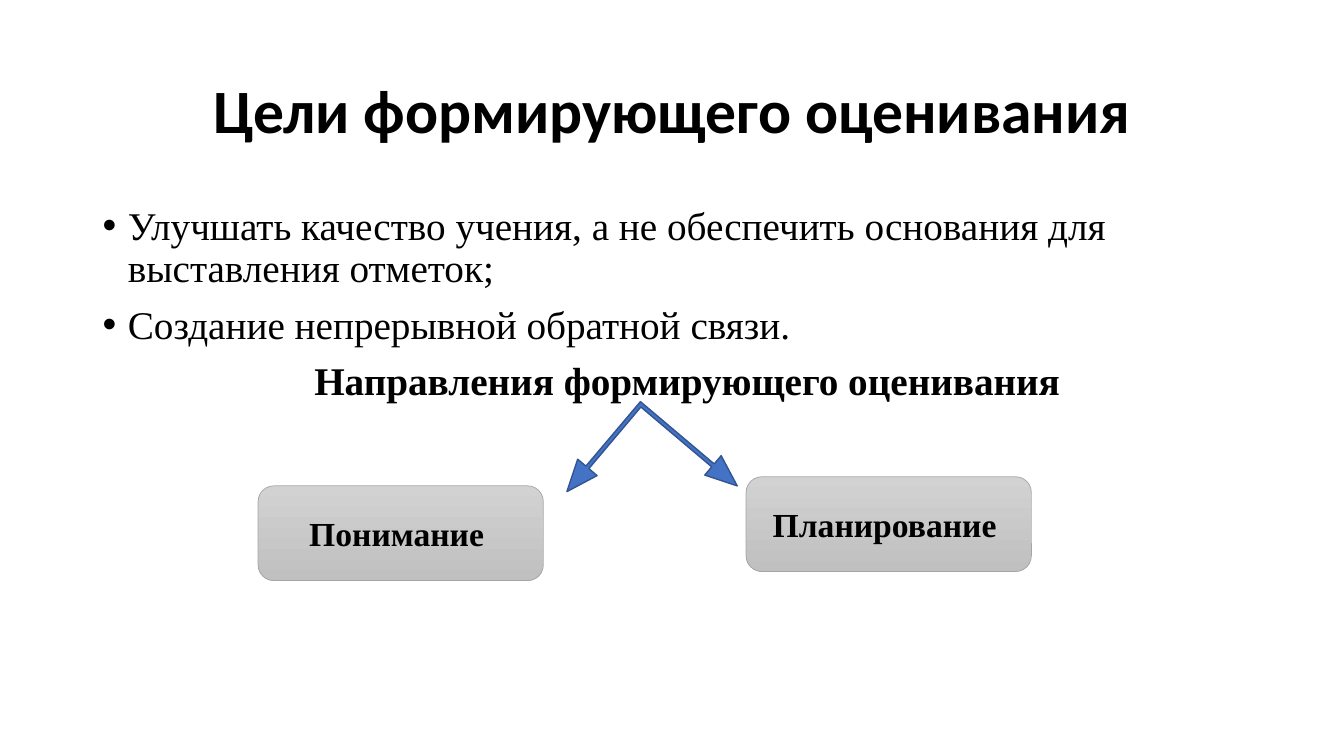
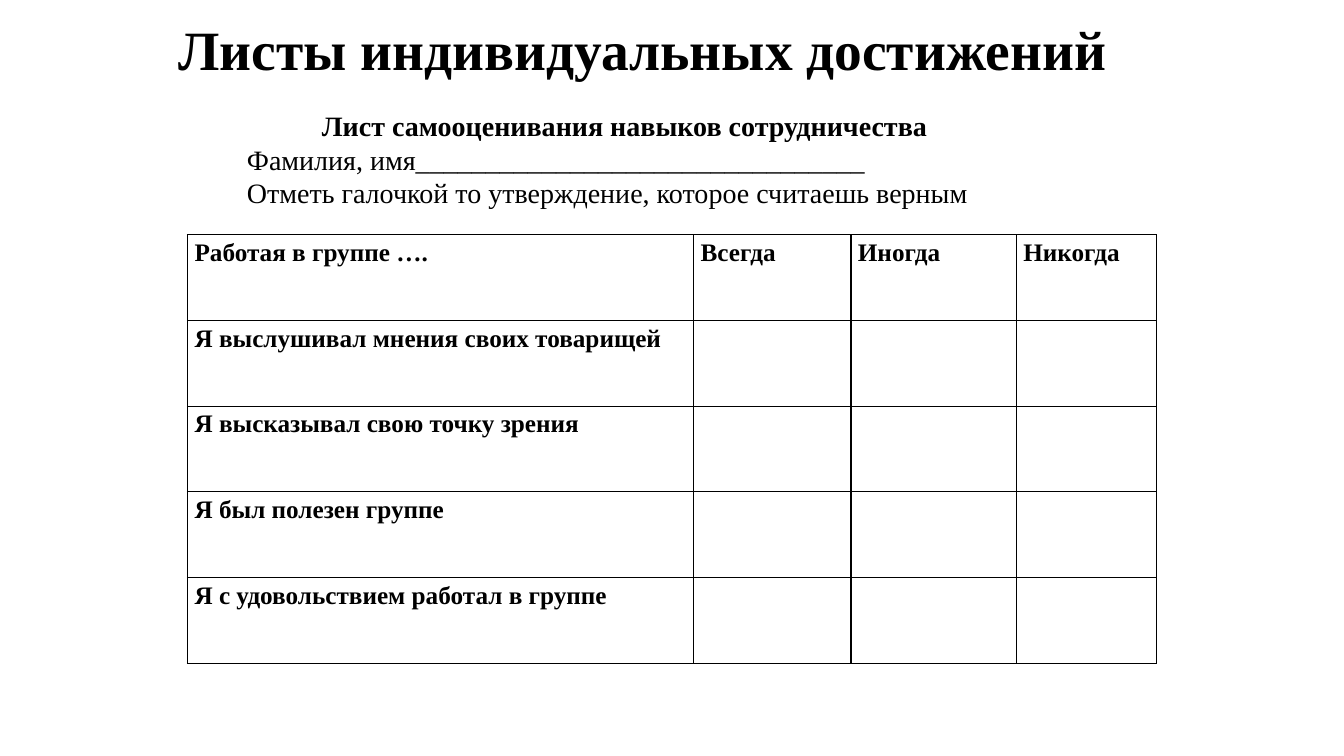
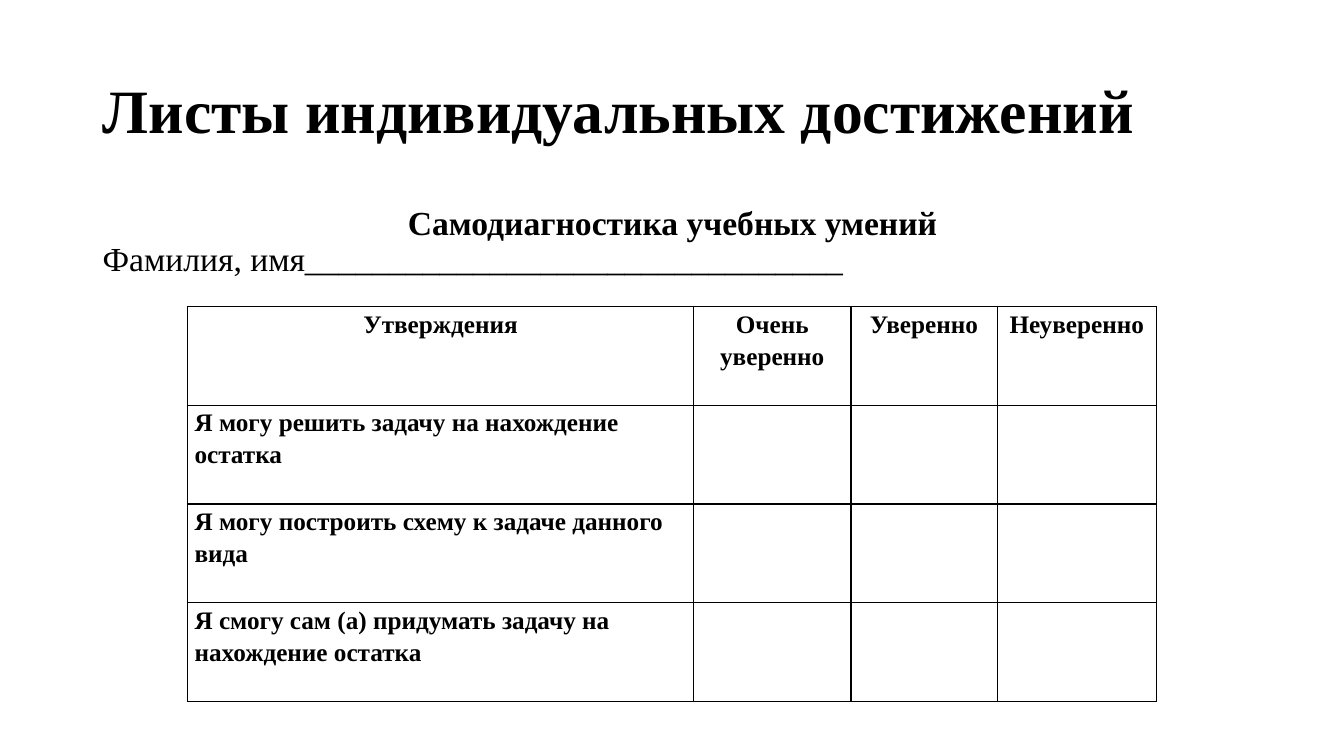
from dataclasses import dataclass

from pptx import Presentation
from pptx.dml.color import RGBColor
from pptx.enum.shapes import MSO_SHAPE
from pptx.enum.text import MSO_ANCHOR, MSO_AUTO_SIZE, PP_ALIGN
from pptx.oxml import parse_xml
from pptx.oxml.ns import nsdecls
from pptx.util import Inches, Pt

LEFT, CENTER = PP_ALIGN.LEFT, PP_ALIGN.CENTER
TOP, MIDDLE = MSO_ANCHOR.TOP, MSO_ANCHOR.MIDDLE
NO_AUTOFIT = MSO_AUTO_SIZE.NONE
ROUNDED = MSO_SHAPE.ROUNDED_RECTANGLE
FORKED_ARROW = MSO_SHAPE.LEFT_UP_ARROW
TITLE_ONLY = 5


@dataclass(frozen=True)
class Theme:
    # Fonts and colours
    serif: str = "Times New Roman"
    sans: str = "Calibri"
    ink: str = "000000"
    arrow_fill: str = "4472C4"
    arrow_line: str = "325491"
    box_top: str = "D2D2D2"
    box_bottom: str = "C0C0C0"
    box_line: str = "A5A5A5"
    # Type sizes in points
    title: float = 44
    small_title: float = 39.6
    body: float = 28
    label: float = 24
    form: float = 20
    cell: float = 18
    # Line spacing and paragraph gap
    tight: float = 0.9
    loose: float = 1.15
    gap: float = 10


THEME = Theme()
TITLE_AREA = (0.92, 0.4, 11.5, 1.45)
BODY_AREA = (0.92, 2, 11.5, 4.76)
NAME_LINE = "Фамилия, имя" + "_" * 32


def inches(area):
    return [Inches(value) for value in area]


def color(code):
    return RGBColor.from_string(code)


class Deck:
    """Holds the style and the current slide."""

    def __init__(self, theme):
        self.theme = theme
        self.presentation = Presentation()
        self.presentation.slide_width = Inches(13.33)
        self.presentation.slide_height = Inches(7.5)
        self.slide = None

    def set_paragraph(self, paragraph, text, size, bold=False, font=None, indent=0,
                      bullet=False, **layout):
        paragraph.text = text
        properties = paragraph._p.get_or_add_pPr()
        if indent:
            properties.set("marL", str(Inches(indent)))
        if bullet:
            properties.set("indent", str(-Inches(indent)))
            properties.append(parse_xml(f'<a:buFont {nsdecls("a")} typeface="Arial"/>'))
            properties.append(parse_xml(f'<a:buChar {nsdecls("a")} char="•"/>'))
        for name, value in layout.items():
            setattr(paragraph, name, value)
        style = {"name": font or self.theme.serif, "size": Pt(size), "bold": bold}
        for name, value in style.items():
            setattr(paragraph.font, name, value)
        paragraph.font.color.rgb = color(self.theme.ink)

    def frame(self, shape, anchor):
        text_frame = shape.text_frame
        settings = {"word_wrap": True, "auto_size": NO_AUTOFIT, "vertical_anchor": anchor}
        for name, value in settings.items():
            setattr(text_frame, name, value)
        return text_frame

    def new_slide(self, title, area=TITLE_AREA, **style):
        layout = self.presentation.slide_layouts[TITLE_ONLY]
        self.slide = self.presentation.slides.add_slide(layout)
        shape = self.slide.shapes.title
        shape.left, shape.top, shape.width, shape.height = inches(area)
        style = {"size": self.theme.title, "alignment": LEFT, **style}
        self.set_paragraph(self.frame(shape, MIDDLE).paragraphs[0], title, bold=True,
                           line_spacing=self.theme.tight, **style)

    def text(self, lines, area=BODY_AREA, **shared):
        """Each line is a pair: its wording and its own format values."""
        text_frame = self.frame(self.slide.shapes.add_textbox(*inches(area)), TOP)
        for index, (wording, style) in enumerate(lines):
            paragraph = text_frame.add_paragraph() if index else text_frame.paragraphs[0]
            self.set_paragraph(paragraph, wording, **{**shared, **style})

    def shape(self, kind, area, line, width):
        shape = self.slide.shapes.add_shape(kind, *inches(area))
        shape.shadow.inherit = False
        shape.line.color.rgb = color(line)
        shape.line.width = Pt(width)
        return shape

    def label_box(self, text, left, top):
        shape = self.shape(ROUNDED, (left, top, 2.83, 0.94), self.theme.box_line, 0.5)
        shape.fill.gradient()
        shape.fill.gradient_angle = 270
        for stop, code in zip(shape.fill.gradient_stops,
                              (self.theme.box_top, self.theme.box_bottom)):
            stop.color.rgb = color(code)
        text_frame = self.frame(shape, MIDDLE)
        text_frame.margin_right = Inches(0.18)
        self.set_paragraph(text_frame.paragraphs[0], text, self.theme.label, bold=True,
                           alignment=CENTER)

    def forked_arrow(self, area, rotation, adjustments):
        shape = self.shape(FORKED_ARROW, area, self.theme.arrow_line, 1)
        shape.fill.solid()
        shape.fill.fore_color.rgb = color(self.theme.arrow_fill)
        shape.rotation = rotation
        for index, value in enumerate(adjustments):
            shape.adjustments[index] = value

    def border(self, cell):
        properties = cell._tc.get_or_add_tcPr()
        for index, side in enumerate("LRTB"):
            properties.insert(index, parse_xml(
                f'<a:ln{side} {nsdecls("a")} w="{Pt(1)}"><a:solidFill>'
                f'<a:srgbClr val="{self.theme.ink}"/></a:solidFill></a:ln{side}>'))

    def checklist(self, headings, statements, top, widths, row_height,
                  heading_alignment=LEFT):
        """Table with a heading row, statements on the left and cells to tick."""
        rows = [headings] + [[statement] for statement in statements]
        area = (1.86, top, sum(widths), row_height * len(rows))
        table = self.slide.shapes.add_table(len(rows), len(widths), *inches(area)).table
        table.first_row = table.horz_banding = False
        for column, width in zip(table.columns, widths):
            column.width = Inches(width)
        for row in table.rows:
            row.height = Inches(row_height)
        margins = {"margin_left": Inches(0.07), "margin_right": Inches(0.07),
                   "margin_top": 0, "margin_bottom": 0}
        for cell in table.iter_cells():
            for name, value in margins.items():
                setattr(cell, name, value)
            cell.fill.background()
            self.border(cell)
        for row_index, row in enumerate(rows):
            for column_index, wording in enumerate(row):
                paragraph = table.cell(row_index, column_index).text_frame.paragraphs[0]
                self.set_paragraph(paragraph, wording, self.theme.cell, bold=True,
                                   line_spacing=self.theme.loose,
                                   alignment=LEFT if row_index else heading_alignment)


def main():
    deck = Deck(THEME)
    heading = {"bold": True, "alignment": CENTER}
    bullet = {"bullet": True, "indent": 0.25}
    spaced = {"space_before": Pt(THEME.gap)}

    # Goals and directions
    deck.new_slide("Цели формирующего оценивания", font=THEME.sans, alignment=CENTER)
    deck.text([
        ("Улучшать качество учения, а не обеспечить основания для выставления отметок;",
         bullet),
        ("Создание непрерывной обратной связи.", {**bullet, **spaced}),
        ("Направления формирующего оценивания", {**heading, **spaced, "indent": 0.29}),
    ], size=THEME.body, line_spacing=THEME.tight)
    deck.label_box("Понимание", 2.56, 4.82)
    deck.label_box("Планирование", 7.4, 4.73)
    deck.forked_arrow((5.77, 4.13, 1.38, 1.26), 220.2, (0.03, 0.1, 0.25))

    # Teamwork self-assessment
    deck.new_slide("Листы индивидуальных достижений", (1.67, 0.02, 10, 1.01),
                   size=THEME.small_title)
    deck.checklist(
        ["Работая в группе ….", "Всегда", "Иногда", "Никогда"],
        ["Я выслушивал мнения своих товарищей", "Я высказывал свою точку зрения",
         "Я был полезен группе", "Я с удовольствием работал в группе"],
        top=2.33, widths=(5.02, 1.56, 1.64, 1.39), row_height=0.85)
    deck.text([
        ("Лист самооценивания навыков сотрудничества", heading),
        (NAME_LINE, {}),
        ("Отметь галочкой то утверждение, которое считаешь верным", {}),
    ], (2.35, 1.03, 7.69, 1.2), size=THEME.form)

    # Learning skills self-check
    deck.new_slide("Листы индивидуальных достижений")
    deck.text([("Самодиагностика учебных умений", heading), (NAME_LINE, {})],
              size=THEME.label, line_spacing=THEME.tight)
    deck.checklist(
        ["Утверждения", "Очень уверенно", "Уверенно", "Неуверенно"],
        ["Я могу решить задачу на нахождение остатка",
         "Я могу построить схему к задаче данного вида",
         "Я смогу сам (а) придумать задачу на нахождение остатка"],
        top=3.04, widths=(5.02, 1.56, 1.45, 1.58), row_height=0.98,
        heading_alignment=CENTER)

    deck.presentation.save("out.pptx")


if __name__ == "__main__":
    main()
